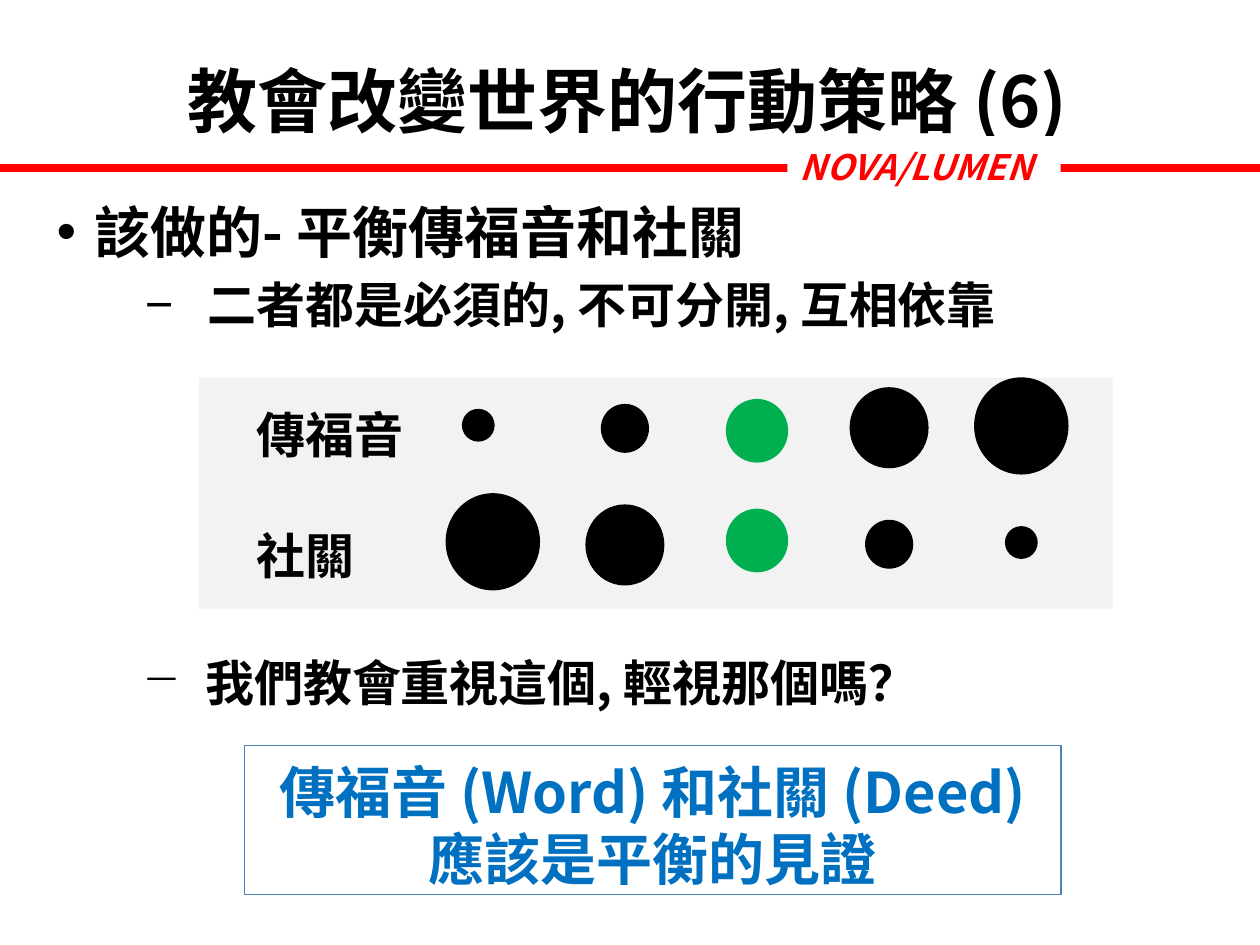
import pptx
import pptx.dml.color
import pptx.enum.shapes
import pptx.enum.text
import pptx.oxml.ns
import pptx.util
from lxml import etree

Pt = pptx.util.Pt
Shape = pptx.enum.shapes.MSO_SHAPE
Align = pptx.enum.text.PP_ALIGN
FONT = "Noto Sans CJK TC"
COLORS = {
    "text": "000000",
    "accent": "FF0000",
    "paper": "FFFFFF",
    "panel": "F2F2F2",
    "balanced": "00B050",
    "message": "0070C0",
    "frame": "4F81BD",
}


def rgb(name):
    return pptx.dml.color.RGBColor.from_string(COLORS[name])


def place(shape, box):
    shape.left, shape.top, shape.width, shape.height = (Pt(v) for v in box)


def prepare(frame, size, wrap=True):
    """Anchor at the top, leaving room for the tight line height."""
    frame.auto_size = pptx.enum.text.MSO_AUTO_SIZE.NONE
    frame.word_wrap = wrap
    frame.vertical_anchor = pptx.enum.text.MSO_ANCHOR.TOP
    frame.margin_left = frame.margin_right = Pt(7.2)
    frame.margin_top = Pt(3.6 + size / 10)
    frame.margin_bottom = Pt(0)


def write(paragraph, text, size=28, color="text", italic=False, align=Align.LEFT,
          before=0, level=0, bullet=None, margin=0, hanging=0):
    paragraph.text = text
    paragraph.alignment = align
    paragraph.level = level
    paragraph.line_spacing = Pt(size * 1.2)
    paragraph.space_before = Pt(before)
    for run in paragraph.runs:
        run.font.name = FONT
        run.font.size = Pt(size)
        run.font.bold = True
        run.font.italic = italic
        run.font.color.rgb = rgb(color)
        east_asian = etree.SubElement(run.font._element, pptx.oxml.ns.qn("a:ea"))
        east_asian.set("typeface", FONT)
    if bullet:
        properties = paragraph._p.get_or_add_pPr()
        properties.set("marL", str(Pt(margin)))
        properties.set("indent", str(Pt(-hanging)))
        mark = etree.SubElement(properties, pptx.oxml.ns.qn("a:buChar"))
        mark.set("char", bullet)


def write_subpoint(paragraph, text, before=0):
    write(paragraph, text, before=before, level=1, bullet="−", margin=86.4, hanging=36)


def add_filled(shapes, kind, box, fill=None, line=None):
    shape = shapes.add_shape(kind, *(Pt(v) for v in box))
    shape.shadow.inherit = False
    if fill:
        shape.fill.solid()
        shape.fill.fore_color.rgb = rgb(fill)
    else:
        shape.fill.background()
    if line:
        shape.line.color.rgb = rgb(line)
        shape.line.width = Pt(0.75)
    else:
        shape.line.fill.background()
    return shape


def add_heading(slide, box):
    heading = slide.shapes.title
    place(heading, box)
    prepare(heading.text_frame, 40)
    write(heading.text_frame.paragraphs[0], "教會改變世界的行動策略 (6)", size=40,
          align=Align.CENTER)


def add_divider(slide, left, y, width):
    """Red rule across the slide, interrupted by the organisation's name."""
    rule = slide.shapes.add_connector(pptx.enum.shapes.MSO_CONNECTOR.STRAIGHT,
                                      Pt(left), Pt(y), Pt(left + width), Pt(y))
    rule.line.color.rgb = rgb("accent")
    rule.line.width = Pt(4.5)
    etree.SubElement(rule._element.spPr, pptx.oxml.ns.qn("a:effectLst"))
    organisation = add_filled(slide.shapes, Shape.RECTANGLE,
                              (left + 450, y - 18, 156.2, 31.7), "paper")
    prepare(organisation.text_frame, 20)
    write(organisation.text_frame.paragraphs[0], "NOVA/LUMEN", size=20,
          color="accent", italic=True)


def add_points(slide, box):
    points = slide.placeholders[1]
    place(points, box)
    prepare(points.text_frame, 32)
    write(points.text_frame.paragraphs[0], "該做的- 平衡傳福音和社關", size=32,
          bullet="•", margin=21.6, hanging=21.6)
    write_subpoint(points.text_frame.add_paragraph(),
                   "二者都是必須的, 不可分開, 互相依靠", before=6)


def add_balance_panel(slide, left, top, width, height):
    """Two rows of circles: one grows while the other shrinks."""
    group = slide.shapes.add_group_shape()
    add_filled(group.shapes, Shape.RECTANGLE, (left, top, width, height), "panel")
    rows = [
        ("傳福音", 8.6, [0, 1, 2, 3, 4], [27, 28.8, 30.2, 28.4, 27.4]),
        ("社關", 77.8, [4, 3, 2, 1, 0], [93.6, 95.4, 92.9, 95, 94]),
    ]
    for label, label_top, weights, centers in rows:
        for column, (weight, center) in enumerate(zip(weights, centers)):
            x = left + 167.8 + 75.5 * column
            if column == 0 and weight == 0:
                x -= 8.3
            w, h = 18 + 8.8 * weight, 18 + 9.2 * weight
            balanced = weight == 2
            add_filled(group.shapes, Shape.OVAL,
                       (x - w / 2, top + center - h / 2, w, h),
                       "balanced" if balanced else "text",
                       None if balanced else "text")
        name = group.shapes.add_textbox(Pt(left + 25.9), Pt(top + label_top),
                                        Pt(115.2), Pt(54.7))
        prepare(name.text_frame, 28, wrap=False)
        write(name.text_frame.paragraphs[0], label)


def add_question(slide, box):
    question = slide.shapes.add_textbox(*(Pt(v) for v in box))
    prepare(question.text_frame, 28)
    write_subpoint(question.text_frame.paragraphs[0], "我們教會重視這個, 輕視那個嗎？")


def add_conclusion(slide, box):
    conclusion = add_filled(slide.shapes, Shape.RECTANGLE, box, line="frame")
    prepare(conclusion.text_frame, 32)
    write(conclusion.text_frame.paragraphs[0],
          "傳福音 (Word) 和社關 (Deed)\v應該是平衡的見證", size=32,
          color="message", align=Align.CENTER)


def main():
    deck = pptx.Presentation()
    deck.slide_width, deck.slide_height = Pt(720), Pt(540)
    slide = deck.slides.add_slide(deck.slide_layouts[1])
    add_divider(slide, 0, 95.8, 720)
    add_heading(slide, (-1.4, 25.2, 720, 55.4))
    add_points(slide, (25.2, 105.8, 660.2, 85.7))
    add_conclusion(slide, (139.7, 426.2, 466.6, 85))
    add_balance_panel(slide, 113.8, 216, 522, 131.8)
    add_question(slide, (23.8, 366.5, 592.6, 41))
    deck.save("out.pptx")


if __name__ == "__main__":
    main()
